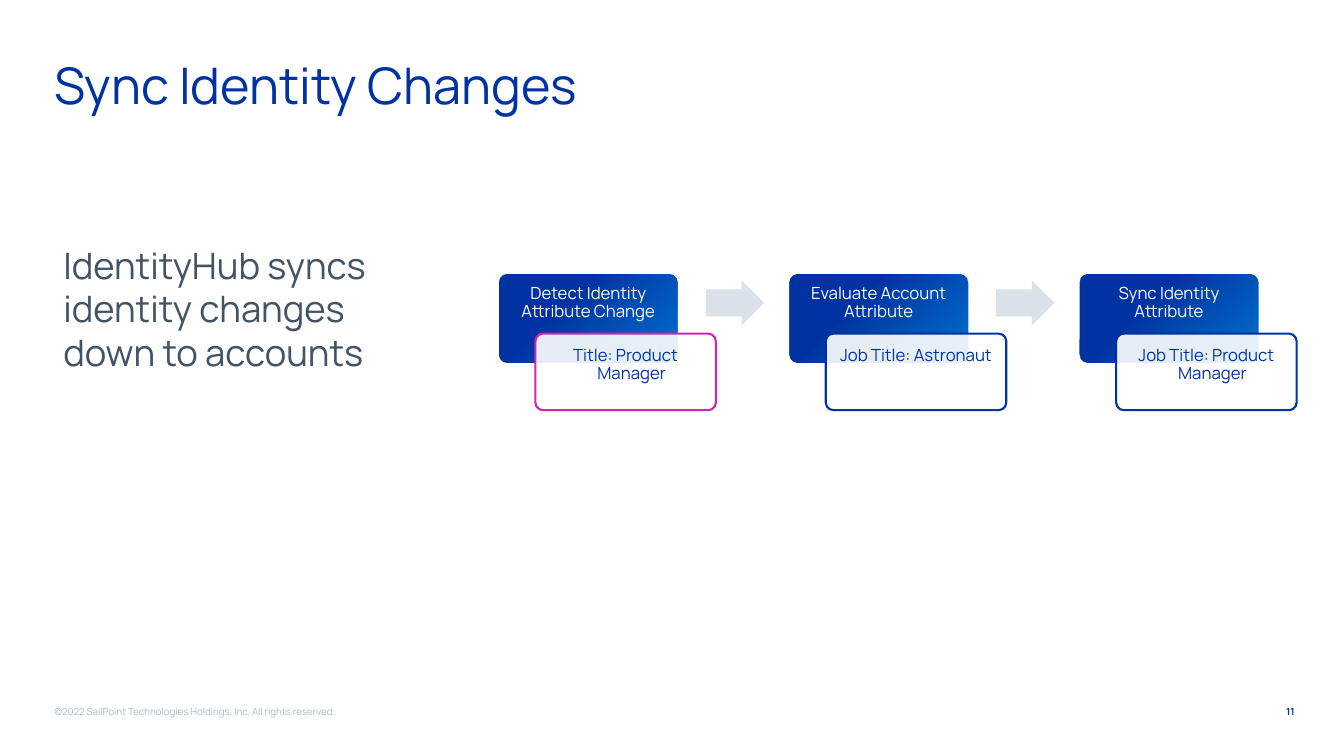
import pptx
import pptx.util
import pptx.dml.color
import pptx.enum.shapes
import pptx.enum.text
import pptx.oxml.ns
from lxml import etree

Inches, Pt = pptx.util.Inches, pptx.util.Pt
RGBColor = pptx.dml.color.RGBColor
Shapes = pptx.enum.shapes.MSO_SHAPE
Align = pptx.enum.text.PP_ALIGN
Anchor = pptx.enum.text.MSO_ANCHOR

FONT = "Manrope"
NAVY = RGBColor(0x00, 0x33, 0xA1)
BLUE = RGBColor(0x00, 0x71, 0xCE)
MAGENTA = RGBColor(0xCC, 0x27, 0xB0)
SLATE = RGBColor(0x41, 0x53, 0x64)
GREY = RGBColor(0xAB, 0xBA, 0xC9)
PALE = RGBColor(0xDA, 0xE1, 0xE9)
WHITE = RGBColor(0xFF, 0xFF, 0xFF)

presentation = pptx.Presentation()
presentation.slide_width = Inches(13.33)
presentation.slide_height = Inches(7.5)
slide = presentation.slides.add_slide(presentation.slide_layouts[6])


def write(shape, text, size, color, align=Align.LEFT, anchor=Anchor.TOP, bold=False):
    frame = shape.text_frame
    frame.word_wrap = True
    frame.vertical_anchor = anchor
    paragraph = frame.paragraphs[0]
    paragraph.alignment = align
    run = paragraph.add_run()
    run.text = text
    run.font.name = FONT
    run.font.size = Pt(size)
    run.font.bold = bold
    run.font.color.rgb = color
    return paragraph


def add_card(left, top, width, height, line_color, line_width, inset):
    card = slide.shapes.add_shape(Shapes.ROUNDED_RECTANGLE, Inches(left), Inches(top),
                                  Inches(width), Inches(height))
    card.adjustments[0] = 0.1
    card.shadow.inherit = False
    card.line.color.rgb = line_color
    card.line.width = Pt(line_width)
    frame = card.text_frame
    frame.margin_left = frame.margin_top = frame.margin_right = Inches(inset)
    frame.margin_bottom = Inches(0.05)
    return card


# Title, statement and footer
MARGIN, FOOTER_TOP = 0.44, 6.95
texts = [
    (MARGIN, 0.4, 12.5, 0.87, "Sync Identity Changes", 36, NAVY, Align.LEFT, Anchor.MIDDLE, False),
    (0.53, 2.36, 3.74, 3.59, "IdentityHub syncs identity changes down to accounts",
     26, SLATE, Align.LEFT, Anchor.TOP, False),
    (MARGIN, FOOTER_TOP, 4.24, 0.25,
     "©2022 SailPoint Technologies Holdings, Inc. All rights reserved.",
     7, GREY, Align.LEFT, Anchor.TOP, False),
    (12.07, FOOTER_TOP, 0.87, 0.25, "11", 7, NAVY, Align.RIGHT, Anchor.TOP, True),
]
for left, top, width, height, *content in texts:
    box = slide.shapes.add_textbox(Inches(left), Inches(top), Inches(width), Inches(height))
    write(box, *content)

# Process: one column per step, with an arrow between columns
FLOW_LEFT, FLOW_TOP, STEP_PITCH, CARD_WIDTH = 4.94, 2.71, 2.88, 1.79
steps = [
    ("Detect Identity Attribute Change", "Title: Product Manager", MAGENTA),
    ("Evaluate Account Attribute", "Job Title: Astronaut", NAVY),
    ("Sync Identity Attribute", "Job Title: Product Manager", NAVY),
]
for column, (heading, detail, outline) in enumerate(steps):
    left = FLOW_LEFT + column * STEP_PITCH

    # Heading card with a diagonal gradient
    heading_card = add_card(left, FLOW_TOP, CARD_WIDTH, 0.9, WHITE, 1, 0.09)
    heading_card.fill.gradient()
    heading_card.fill.gradient_angle = 315
    for stop, color, position in zip(heading_card.fill.gradient_stops, (NAVY, BLUE), (0.35, 1)):
        stop.color.rgb = color
        stop.position = position
    write(heading_card, heading, 12, WHITE, Align.CENTER).line_spacing = 0.9

    # Translucent detail card
    detail_card = add_card(left + 0.37, FLOW_TOP + 0.6, CARD_WIDTH, 0.76, outline, 1.5, 0.11)
    detail_card.fill.solid()
    detail_card.fill.fore_color.rgb = WHITE
    fill_color = detail_card._element.spPr.find(".//" + pptx.oxml.ns.qn("a:srgbClr"))
    etree.SubElement(fill_color, pptx.oxml.ns.qn("a:alpha"), val="90000")
    paragraph = write(detail_card, detail, 12, NAVY, Align.CENTER)
    paragraph.line_spacing = 0.9
    properties = paragraph._p.get_or_add_pPr()
    properties.set("marL", str(Inches(0.12)))
    properties.set("indent", str(-Inches(0.12)))

    # Arrow to the next step
    if column < len(steps) - 1:
        arrow = slide.shapes.add_shape(Shapes.RIGHT_ARROW, Inches(left + 2.06),
                                       Inches(FLOW_TOP + 0.07), Inches(0.58), Inches(0.45))
        arrow.adjustments[0] = 0.6
        arrow.adjustments[1] = 0.5
        arrow.shadow.inherit = False
        arrow.fill.solid()
        arrow.fill.fore_color.rgb = PALE
        arrow.line.fill.background()

presentation.save("out.pptx")
